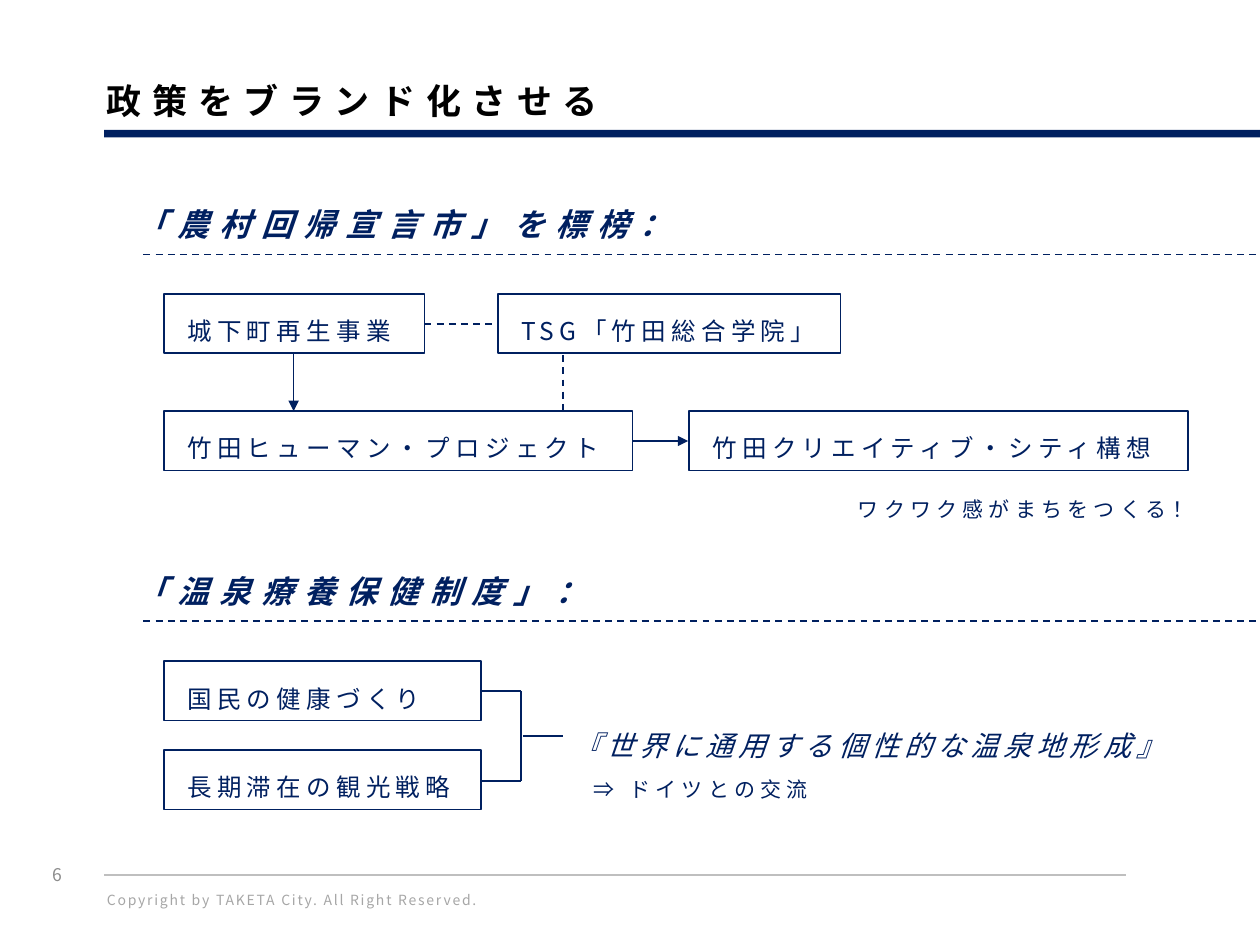
from lxml import etree
from pptx import Presentation
from pptx.dml.color import RGBColor
from pptx.enum import dml, shapes, text
from pptx.oxml.ns import qn
from pptx.util import Pt

FONT = "Noto Sans CJK JP"
NAVY = "002060"


def write(shape, words, size, color=NAVY, spacing=3, bold=False, italic=False,
          leading=1.5, anchor=text.MSO_ANCHOR.MIDDLE, align=text.PP_ALIGN.LEFT):
    frame = shape.text_frame
    frame.word_wrap = True
    frame.vertical_anchor = anchor
    paragraph = frame.paragraphs[0]
    paragraph.text = words
    paragraph.alignment = align
    paragraph.line_spacing = leading
    font = paragraph.font
    font.name, font.size, font.bold, font.italic = FONT, Pt(size), bold, italic
    font.color.rgb = RGBColor.from_string(color)
    properties = font._element
    properties.set("spc", str(spacing * 100))
    etree.SubElement(properties, qn("a:ea")).set("typeface", FONT)


def connect(x1, y1, x2, y2, color=NAVY, dashed=False, arrow=False):
    link = slide.shapes.add_connector(
        shapes.MSO_CONNECTOR.STRAIGHT, Pt(x1), Pt(y1), Pt(x2), Pt(y2))
    link.line.color.rgb = RGBColor.from_string(color)
    link.line.width = Pt(1)
    if dashed:
        link.line.dash_style = dml.MSO_LINE.DASH
    if arrow:
        etree.SubElement(link.line._get_or_add_ln(), qn("a:tailEnd")).set("type", "triangle")
    etree.SubElement(link._element.spPr, qn("a:effectLst"))


deck = Presentation()
deck.slide_width, deck.slide_height = Pt(720), Pt(540)
slide = deck.slides.add_slide(deck.slide_layouts[6])

connect(59.5, 500, 643.5, 500, color="BFBFBF")

title_rule = slide.shapes.add_shape(
    shapes.MSO_SHAPE.RECTANGLE, Pt(59.5), Pt(74.2), Pt(660.5), Pt(4.3))
title_rule.shadow.inherit = False
title_rule.fill.solid()
title_rule.fill.fore_color.rgb = RGBColor.from_string(NAVY)
title_rule.line.fill.background()

top = text.MSO_ANCHOR.TOP
heading = dict(size=18, spacing=6, bold=True, italic=True)
for words, left, y, width, height, style in [
    ("Copyright by TAKETA City. All Right Reserved.", 54, 501, 386, 28,
     dict(size=8, color="A6A6A6", spacing=1, anchor=top)),
    ("6", 23, 485.3, 36, 28.8, dict(size=10, color="8C8C8C", spacing=0, leading=1)),
    ("政策をブランド化させる", 54, 37.5, 666, 39.6,
     dict(size=20, color="000000", spacing=6, bold=True, leading=1)),
    ("「農村回帰宣言市」を標榜：", 70.5, 100, 351.5, 45.4, heading),
    ("「温泉療養保健制度」：", 70.5, 309.6, 351.5, 45.4, heading),
    ("ワクワク感がまちをつくる！", 462.3, 273, 226.8, 26,
     dict(size=12, anchor=top, align=text.PP_ALIGN.RIGHT)),
    ("『世界に通用する個性的な温泉地形成』", 320.4, 401.8, 373, 38.2,
     dict(size=16, italic=True)),
    ("⇒ ドイツとの交流", 332, 440, 147, 28, dict(size=12, leading=1, anchor=top)),
]:
    label = slide.shapes.add_textbox(Pt(left), Pt(y), Pt(width), Pt(height))
    write(label, words, **style)

for y in (145.4, 355):
    connect(82, y, 720, y, dashed=True)

connect(167.8, 200, 167.8, 234.9, arrow=True)
connect(242.6, 185, 288, 185, dashed=True)
connect(321.8, 203, 321.8, 234.9, dashed=True)
connect(361.4, 252, 393.3, 252, arrow=True)

for words, left, y, width in [
    ("城下町再生事業", 93.6, 167.8, 149),
    ("TSG「竹田総合学院」", 284.4, 167.8, 196),
    ("竹田ヒューマン・プロジェクト", 93.6, 234.9, 267.8),
    ("竹田クリエイティブ・シティ構想", 393.8, 234.9, 285.2),
    ("国民の健康づくり", 93.6, 377.8, 181.4),
    ("長期滞在の観光戦略", 93.6, 428.6, 181.4),
]:
    policy = slide.shapes.add_shape(
        shapes.MSO_SHAPE.RECTANGLE, Pt(left), Pt(y), Pt(width), Pt(34))
    policy.shadow.inherit = False
    policy.fill.solid()
    policy.fill.fore_color.rgb = RGBColor.from_string("FFFFFF")
    policy.line.color.rgb = RGBColor.from_string(NAVY)
    policy.line.width = Pt(1)
    policy.text_frame.margin_left = Pt(13.4)
    policy.text_frame.margin_right = 0
    write(policy, words, 14)

for y in (394.8, 446.2):
    connect(275, y, 297.6, y)
connect(297.6, 394.8, 297.6, 446.2)
connect(298.8, 420.5, 321.8, 420.5)

deck.save("out.pptx")
